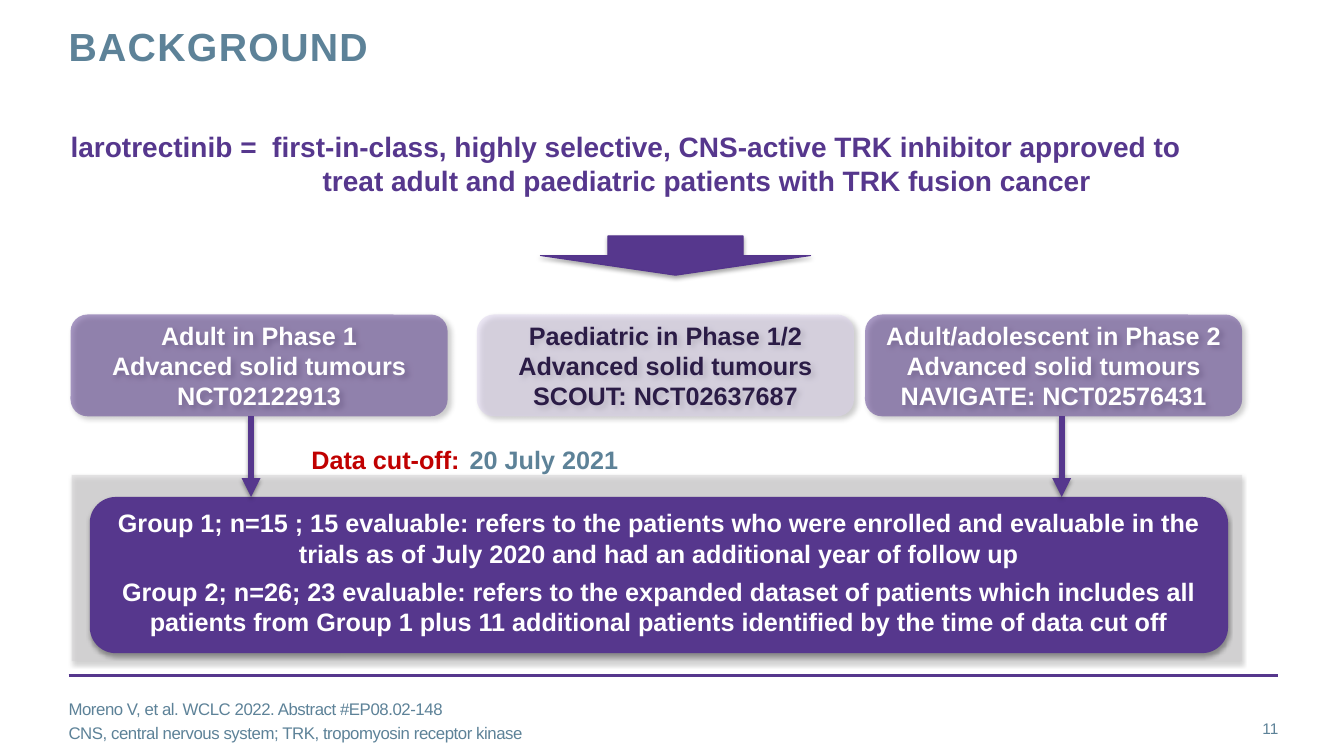
from lxml import etree
from pptx import Presentation
from pptx.dml.color import RGBColor
from pptx.enum.shapes import MSO_CONNECTOR, MSO_SHAPE
from pptx.enum.text import MSO_ANCHOR, PP_ALIGN
from pptx.oxml.ns import qn
from pptx.util import Inches, Pt

PURPLE = RGBColor(0x56, 0x37, 0x8D)
EDGE = RGBColor(0x54, 0x34, 0x8C)
LILAC = RGBColor(0xDC, 0xD2, 0xED)
DARK = RGBColor(0x2B, 0x1C, 0x46)
GREY = RGBColor(0xD1, 0xCF, 0xD1)
SLATE = RGBColor(0x5D, 0x82, 0x98)
RED = RGBColor(0xC0, 0x00, 0x00)
WHITE = RGBColor(0xFF, 0xFF, 0xFF)
BLACK = RGBColor(0x00, 0x00, 0x00)
RECT, ROUND, DOWN = MSO_SHAPE.RECTANGLE, MSO_SHAPE.ROUNDED_RECTANGLE, MSO_SHAPE.DOWN_ARROW
STRAIGHT = MSO_CONNECTOR.STRAIGHT
TOP, MIDDLE = MSO_ANCHOR.TOP, MSO_ANCHOR.MIDDLE
LEFT, CENTER, RIGHT = PP_ALIGN.LEFT, PP_ALIGN.CENTER, PP_ALIGN.RIGHT
SOFT = (35, 3.1, 1.8, 90)
DEEP = (40, 4, 3, 45)
THIN = (38, 3.1, 1.6, 90)


def add_tag(parent, tag, **attrs):
    """Append a drawing element with the given attributes."""
    return etree.SubElement(parent, qn(tag), {k: str(v) for k, v in attrs.items()})


def add_shade(effects, shade):
    """Put an outer shadow into an effect list."""
    alpha, blur, dist, angle = shade
    outer = add_tag(effects, "a:outerShdw", blurRad=Pt(blur), dist=Pt(dist),
                    dir=angle * 60000, rotWithShape=0)
    color = add_tag(outer, "a:srgbClr", val=BLACK)
    add_tag(color, "a:alpha", val=alpha * 1000)


def write(frame, lines, size, color, bold=True, align=LEFT, anchor=TOP,
          inset=(0.1, 0.05, 0.1, 0.05), wrap=True, tabs=(), track=0, before=0, after=0):
    """Fill a text frame; each line is a string or a list of (text, color) runs."""
    frame.word_wrap, frame.vertical_anchor = wrap, anchor
    (frame.margin_left, frame.margin_top,
     frame.margin_right, frame.margin_bottom) = map(Inches, inset)
    for i, line in enumerate(lines):
        para = frame.paragraphs[0] if i == 0 else frame.add_paragraph()
        para.alignment = align
        if before and i:
            para.space_before = Pt(before)
        if after:
            para.space_after = Pt(after)
        if tabs:
            stops = add_tag(para._p.get_or_add_pPr(), "a:tabLst")
            add_tag(stops, "a:tab", pos=Inches(tabs[i]), algn="l")
        font = para.font
        font.name, font.size, font.bold, font.color.rgb = "Arial", Pt(size), bold, color
        for text, tint in [(line, None)] if isinstance(line, str) else line:
            run = para.add_run()
            run.text = text
            if tint is not None:
                run.font.color.rgb = tint
            if track:
                run._r.get_or_add_rPr().set("spc", str(round(track * 100)))


def add_text(slide, box, lines, size, color, **style):
    """Add a text box and return its frame."""
    frame = slide.shapes.add_textbox(*map(Inches, box)).text_frame
    write(frame, lines, size, color, **style)
    return frame


def add_block(slide, kind, box, color, shade, alpha=100):
    """Add a filled, shadowed shape without an outline."""
    shape = slide.shapes.add_shape(kind, *map(Inches, box))
    shape.fill.solid()
    shape.fill.fore_color.rgb = color
    shape.line.fill.background()
    shape.shadow.inherit = False
    props = shape._element.spPr
    add_shade(props.find(qn("a:effectLst")), shade)
    if alpha < 100:
        add_tag(props.find(qn("a:solidFill"))[0], "a:alpha", val=alpha * 1000)
    return shape


def add_line(slide, start, end, width, shade=None, head=False):
    """Draw a straight purple line, with an arrowhead if asked."""
    line = slide.shapes.add_connector(STRAIGHT, *map(Inches, start + end))
    line.line.color.rgb = PURPLE
    line.line.width = Pt(width)
    props = line._element.spPr
    if head:
        add_tag(props.find(qn("a:ln")), "a:tailEnd", type="triangle")
    effects = add_tag(props, "a:effectLst")
    if shade:
        add_shade(effects, shade)


def add_header(slide, box):
    """Write the slide title."""
    frame = add_text(slide, box, ["BACKGROUND"], 28, SLATE, inset=(0, 0, 0, 0), track=1)
    frame.paragraphs[0].line_spacing = Pt(30)


def add_footer(slide, box):
    """Draw the rule, the references and the page number."""
    left, top, width, height = box
    page = 0.86
    add_line(slide, (left, top), (left + width, top), 2)
    style = dict(bold=False, anchor=MIDDLE, inset=(0, 0, 0, 0))
    add_text(slide, (left, top + 0.25, width - page, height),
             ["Moreno V, et al. WCLC 2022. Abstract #EP08.02-148",
              "CNS, central nervous system; TRK, tropomyosin receptor kinase"],
             12, SLATE, track=-0.3, before=3, **style)
    add_text(slide, (left + width - page, top + 0.33, page, height),
             ["11"], 11, SLATE, align=RIGHT, **style)


def add_intro(slide, box):
    """State what the drug is, with an arrow down to the trials."""
    left, top, width, height = box
    add_text(slide, box,
             ["larotrectinib =\tfirst-in-class, highly selective, CNS-active TRK inhibitor approved to",
              "\ttreat adult and paediatric patients with TRK fusion cancer"],
             20, PURPLE, inset=(0, 0.05, 0.1, 0.05), tabs=(2, 2.5))
    arrow = add_block(slide, DOWN, (left + 4.66, top + 1.1, 2.68, 0.39), PURPLE, SOFT)
    arrow.line.color.rgb = EDGE
    arrow.line.width = Pt(0.75)


def add_trial(slide, box, fill, ink, lines):
    """Add one trial card."""
    card = add_block(slide, ROUND, box, fill, DEEP, alpha=50)
    write(card.text_frame, lines, 18, ink, align=CENTER, anchor=MIDDLE, wrap=False)


def add_groups(slide, box):
    """Add the grey panel with the patient groups."""
    left, top, width, height = box
    add_block(slide, RECT, box, GREY, SOFT, alpha=50)
    inner = add_block(slide, ROUND, (left + 0.18, top + 0.22, width - 0.32, height - 0.3),
                      PURPLE, SOFT)
    write(inner.text_frame,
          ["Group 1; n=15 ; 15 evaluable: refers to the patients who were enrolled and evaluable "
           "in the trials as of July 2020 and had an additional year of follow up",
           "Group 2; n=26; 23 evaluable: refers to the expanded dataset of patients which includes "
           "all patients from Group 1 plus 11 additional patients identified by the time of data cut off"],
          18, WHITE, align=CENTER, inset=(0.1, 0.03, 0.1, 0), after=6)


def add_links(slide, box):
    """Draw the two arrows into the groups and the cut-off date between them."""
    left, top, width, height = box
    for x in (left, left + width):
        add_line(slide, (x, top), (x, top + height), 4.5, THIN, head=True)
    add_text(slide, (left + 0.5, top + 0.23, 3.27, 0.4),
             [[("Data cut-off:", RED), ("\t20 July 2021", SLATE)]],
             18, SLATE, wrap=False, tabs=(1.57,))


def main():
    """Build the slide and save it."""
    deck = Presentation()
    deck.slide_width, deck.slide_height = Inches(13.33), Inches(7.5)
    slide = deck.slides.add_slide(deck.slide_layouts[6])
    add_footer(slide, (0.68, 6.7, 12, 0.4))
    add_header(slide, (0.68, 0.27, 9.56, 0.88))
    add_intro(slide, (0.7, 1.24, 11.48, 0.77))
    add_groups(slide, (0.71, 4.71, 11.61, 1.85))
    solid = "Advanced solid tumours"
    trials = [
        (0.7, PURPLE, WHITE, ["Adult in Phase 1", solid, "NCT02122913"]),
        (4.73, LILAC, DARK, ["Paediatric in Phase 1/2", solid, "SCOUT: NCT02637687"]),
        (8.58, PURPLE, WHITE, ["Adult/adolescent in Phase 2", solid, "NAVIGATE: NCT02576431"]),
    ]
    for left, fill, ink, lines in trials:
        add_trial(slide, (left, 3.12, 3.74, 1.01), fill, ink, lines)
    add_links(slide, (2.49, 4.13, 8.04, 0.8))
    deck.save("out.pptx")


if __name__ == "__main__":
    main()
